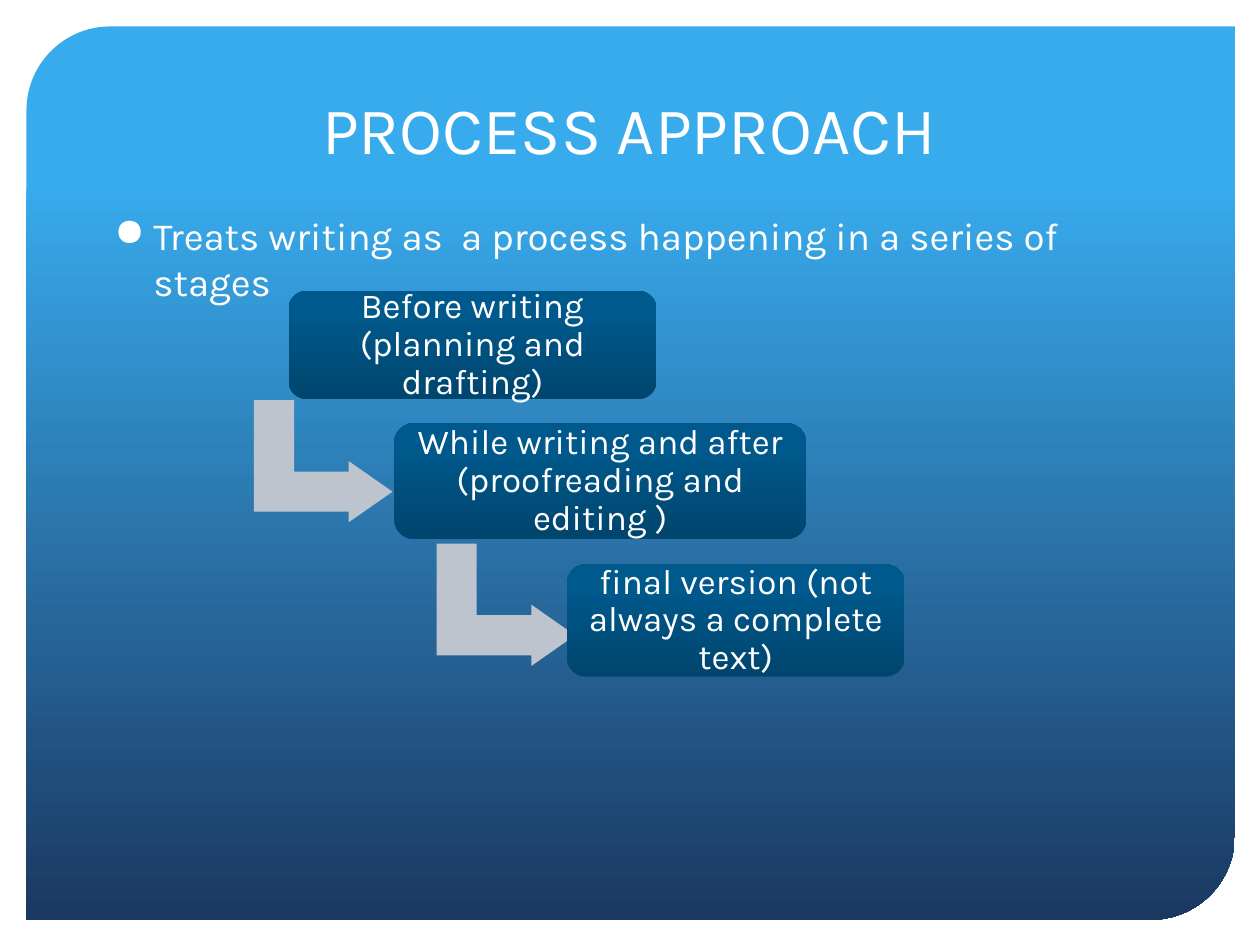
from lxml.etree import SubElement
from pptx import Presentation
from pptx.dml.color import RGBColor
from pptx.enum.shapes import MSO_SHAPE as Shape
from pptx.enum.text import MSO_ANCHOR as Anchor, PP_ALIGN as Align
from pptx.oxml.ns import qn
from pptx.util import Inches, Pt

FONT = "Karla"
WHITE = RGBColor(0xFF, 0xFF, 0xFF)
SKY = RGBColor(0x38, 0xAB, 0xED)
NAVY = RGBColor(0x1B, 0x38, 0x61)
DEEP_BLUE = RGBColor(0x00, 0x45, 0x6D)
BLUE = RGBColor(0x00, 0x59, 0x8D)
GREY = RGBColor(0xBD, 0xC4, 0xCE)

TITLE = "PROCESS APPROACH"
SUMMARY = "Treats writing as  a process happening in a series of stages"
STAGES = [  # wording, then left, top, width, height
    ("Before writing (planning and drafting)", (2.29, 2.31, 2.92, 0.86)),
    ("While writing and after (proofreading and editing )", (3.13, 3.36, 3.27, 0.92)),
    ("final version (not always a complete text)", (4.5, 4.48, 2.68, 0.89)),
]
ARROWS = [(2.08, 3.11), (3.53, 4.25)]  # left, top; each leads to the next stage
ARROW_SIZE = (0.97, 1.1)


def inches(*lengths):
    return [Inches(length) for length in lengths]


def add_plain_shape(slide, kind, box, adjustments):
    shape = slide.shapes.add_shape(kind, *inches(*box))
    shape.shadow.inherit = False
    shape.line.fill.background()
    for i, value in enumerate(adjustments):
        shape.adjustments[i] = value
    return shape


def fill_gradient(shape, angle, stops):
    """Fill with two (position, colour) stops; the angle runs anticlockwise."""
    shape.fill.gradient()
    shape.fill.gradient_angle = angle
    for stop, (position, color) in zip(shape.fill.gradient_stops, stops):
        stop.position = position
        stop.color.rgb = color


def write(paragraph, text, size, align):
    paragraph.text = text
    paragraph.alignment = align
    paragraph.font.name = FONT
    paragraph.font.size = Pt(size)
    paragraph.font.color.rgb = WHITE


def add_panel(slide):
    panel = add_plain_shape(slide, Shape.ROUND_2_DIAG_RECTANGLE,
                            (0.21, 0.21, 9.59, 7.09), (0.094, 0))
    fill_gradient(panel, 270, [(0.17, SKY), (1, NAVY)])
    slide.shapes._spTree.insert(2, panel._element)  # behind the title


def add_title(slide):
    title = slide.shapes.title
    title.left, title.top, title.width, title.height = inches(0.85, 0.42, 8.29, 0.96)
    title.text_frame.vertical_anchor = Anchor.BOTTOM
    write(title.text_frame.paragraphs[0], TITLE, 38, Align.CENTER)


def add_summary(slide):
    frame = slide.shapes.add_textbox(*inches(0.81, 1.63, 8.38, 4.97)).text_frame
    frame.word_wrap = True
    paragraph = frame.paragraphs[0]
    properties = paragraph._p.get_or_add_pPr()
    properties.set("marL", str(Inches(0.31)))
    properties.set("indent", str(Inches(-0.31)))
    SubElement(properties, qn("a:buChar"), char="●")
    write(paragraph, SUMMARY, 22, Align.LEFT)


def add_arrow(slide, corner):
    arrow = add_plain_shape(slide, Shape.BENT_UP_ARROW, corner + ARROW_SIZE,
                            (0.328, 0.25, 0.358))
    arrow.rotation = 90
    arrow.fill.solid()
    arrow.fill.fore_color.rgb = GREY


def add_stage(slide, text, box):
    stage = add_plain_shape(slide, Shape.ROUNDED_RECTANGLE, box, (0.167,))
    fill_gradient(stage, 90, [(0, DEEP_BLUE), (0.8, BLUE)])
    frame = stage.text_frame
    frame.word_wrap = True
    frame.vertical_anchor = Anchor.MIDDLE
    frame.margin_left = frame.margin_right = Inches(0.08)
    frame.margin_top = frame.margin_bottom = Inches(0.08)
    write(frame.paragraphs[0], text, 20, Align.CENTER)
    frame.paragraphs[0].line_spacing = 0.9


def main():
    deck = Presentation()
    deck.slide_width, deck.slide_height = inches(10, 7.5)
    slide = deck.slides.add_slide(deck.slide_layouts.get_by_name("Title Only"))
    add_panel(slide)
    add_title(slide)
    add_summary(slide)
    for corner in ARROWS:
        add_arrow(slide, corner)
    for text, box in STAGES:
        add_stage(slide, text, box)
    deck.save("out.pptx")


if __name__ == "__main__":
    main()
